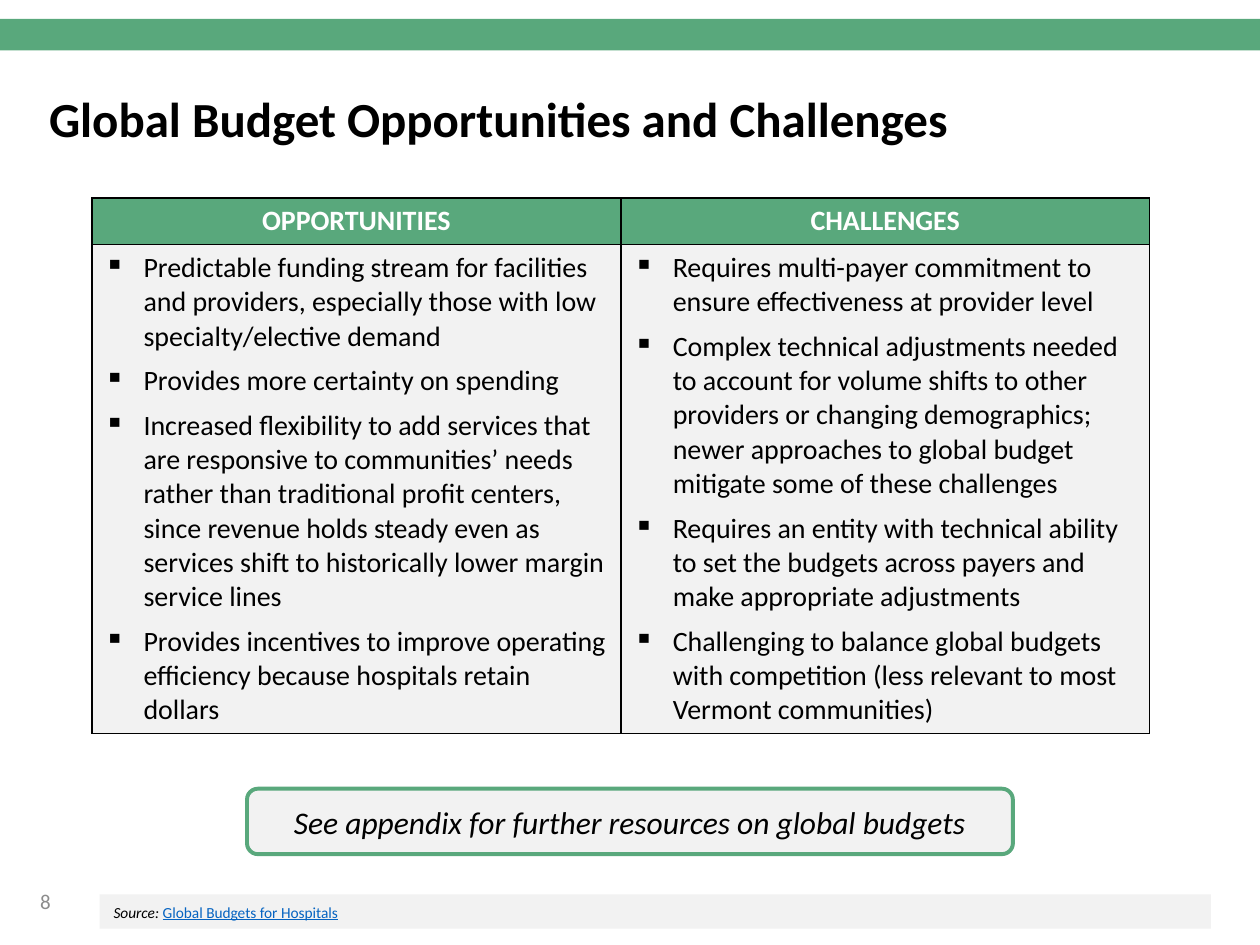
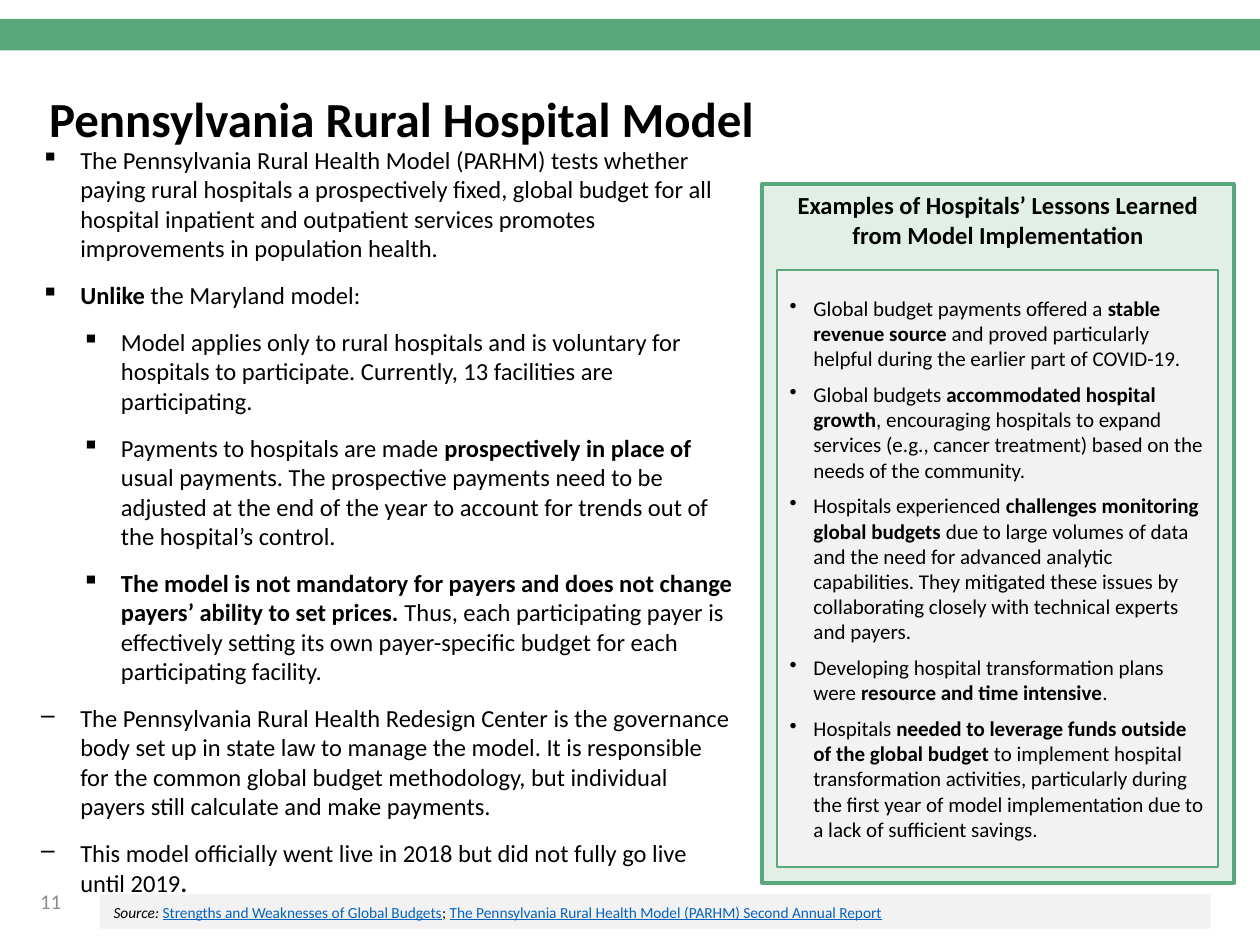
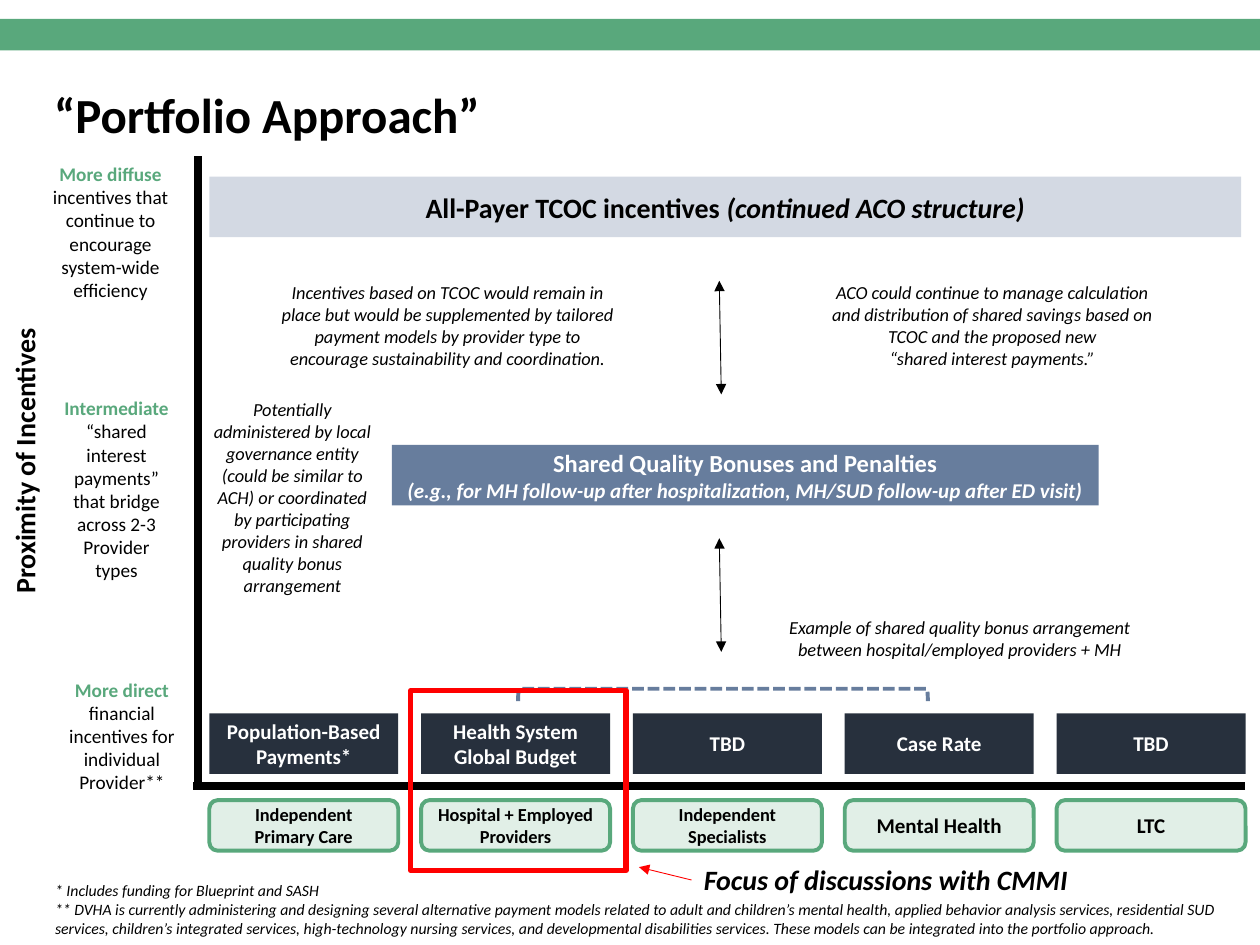
import lxml.etree
import pptx
import pptx.dml.color
import pptx.enum.dml
import pptx.enum.shapes
import pptx.enum.text
import pptx.oxml.ns
import pptx.util

Cm = pptx.util.Cm
Pt = pptx.util.Pt
qn = pptx.oxml.ns.qn
FORM = pptx.enum.shapes.MSO_SHAPE
ALIGN = pptx.enum.text.PP_ALIGN
ANCHOR = pptx.enum.text.MSO_ANCHOR

FONT = "Calibri"
GREEN, MINT, PALE = "59A87C", "E1EFE7", "F2F2F2"
NAVY, STEEL, MIST = "27303D", "677D9D", "D3D9E3"
BLACK, WHITE, GREY, RED, LINK = "000000", "FFFFFF", "8C8C8C", "FF0000", "0563C1"
BOLD = {"bold": True}
LEAD = {"bold": True, "color": GREEN}


def hue(code):
    return pptx.dml.color.RGBColor.from_string(code)


def node(parent, tag, **attrs):
    return lxml.etree.SubElement(parent, qn(tag), attrs)


class Deck:
    """Holds the shared style and the current slide."""

    def __init__(self):
        self.show = pptx.Presentation()
        self.show.slide_width, self.show.slide_height = Cm(25.4), Cm(19.05)
        self.slide = None

    def start(self, title, left=0.74, top=0.61, width=23.44):
        """Add a slide with the green band and its title."""
        self.slide = self.show.slides.add_slide(self.show.slide_layouts[6])
        self.shape((0, 0.38, 25.4, 0.64), GREEN)
        box = self.text((left, top, width, 3.68), [title], 28, bold=True,
                        align=ALIGN.LEFT, anchor=ANCHOR.MIDDLE)
        box.text_frame.paragraphs[0].line_spacing = 0.9

    def foot(self, number, source):
        """Page number and source strip."""
        self.text((0.56, 17.65, 5.72, 1.02), [number], 12, color=GREY,
                  align=ALIGN.LEFT, anchor=ANCHOR.MIDDLE)
        strip = self.shape((2.01, 18.03, 22.4, 0.69), PALE)
        frame = strip.text_frame
        frame.margin_left = frame.margin_right = Cm(0.28)
        frame.margin_top = frame.margin_bottom = Cm(0.15)
        self.words(frame, [source], 8.8, align=ALIGN.LEFT, anchor=ANCHOR.BOTTOM,
                   alt={"color": LINK, "underline": True})
        frame.paragraphs[0].runs[0].font.italic = True

    def style(self, run, size, color=BLACK, bold=False, italic=False, underline=False):
        font = run.font
        font.name, font.size, font.color.rgb = FONT, Pt(size), hue(color)
        font.bold, font.italic, font.underline = bold, italic, underline or None

    def words(self, frame, lines, size, align=ALIGN.CENTER, anchor=ANCHOR.TOP,
              alt=BOLD, **base):
        """Fill a frame; each | switches between the base and alt styles."""
        frame.word_wrap = True
        frame.vertical_anchor = anchor
        for row, line in enumerate(lines):
            para = frame.add_paragraph() if row else frame.paragraphs[0]
            para.alignment = align
            head, *rest = line.split("|")
            para.text = head
            for part in rest:
                para.add_run().text = part
            for turn, run in enumerate(para.runs, 0 if head else 1):
                self.style(run, size, **{**base, **(alt if turn % 2 else {})})

    def bullet(self, para, mark, left, hang, after):
        para.space_after = Pt(after)
        props = para._p.get_or_add_pPr()
        props.set("marL", str(Cm(left)))
        props.set("indent", str(-Cm(hang)))
        node(props, "a:buChar", char=mark)

    def text(self, at, lines, size, **look):
        box = self.slide.shapes.add_textbox(*map(Cm, at))
        self.words(box.text_frame, lines, size, **look)
        return box

    def shape(self, at, fill=None, line=None, weight=2.25, form=FORM.RECTANGLE):
        shape = self.slide.shapes.add_shape(form, *map(Cm, at))
        shape.shadow.inherit = False
        if fill:
            shape.fill.solid()
            shape.fill.fore_color.rgb = hue(fill)
        else:
            shape.fill.background()
        if line:
            shape.line.color.rgb, shape.line.width = hue(line), Pt(weight)
        else:
            shape.line.fill.background()
        return shape

    def label(self, at, lines, size, fill, line=None, form=FORM.RECTANGLE, **look):
        """A filled shape with text in its middle."""
        shape = self.shape(at, fill, line, form=form)
        self.words(shape.text_frame, lines, size, anchor=ANCHOR.MIDDLE, **look)
        return shape

    def line(self, start, end, color=BLACK, weight=0.5, ends=()):
        kind = pptx.enum.shapes.MSO_CONNECTOR.STRAIGHT
        line = self.slide.shapes.add_connector(kind, *map(Cm, start + end))
        line.line.color.rgb, line.line.width = hue(color), Pt(weight)
        props = line._element.spPr
        for tag in ends:
            node(props.find(qn("a:ln")), tag, type="triangle")
        node(props, "a:effectLst")
        return line

    def table(self, at, widths, heights):
        """An empty table with thin black borders."""
        frame = self.slide.shapes.add_table(
            len(heights), len(widths), Cm(at[0]), Cm(at[1]),
            Cm(sum(widths)), Cm(sum(heights)))
        table = frame.table
        for col, width in zip(table.columns, widths):
            col.width = Cm(width)
        for row, height in zip(table.rows, heights):
            row.height = Cm(height)
        for cell in table.iter_cells():
            props = cell._tc.get_or_add_tcPr()
            for side in ("a:lnL", "a:lnR", "a:lnT", "a:lnB"):
                edge = node(props, side, w=str(Pt(1)))
                node(node(edge, "a:solidFill"), "a:srgbClr", val=BLACK)
        return table

    def cell(self, cell, lines, fill, **look):
        cell.fill.solid()
        cell.fill.fore_color.rgb = hue(fill)
        self.words(cell.text_frame, lines, 16, **look)
        cell.vertical_anchor = look.get("anchor", ANCHOR.TOP)


def budget(deck):
    deck.start("Global Budget Opportunities and Challenges")
    # Table with one list per column
    lists = {
        "OPPORTUNITIES": [
            "Predictable funding stream for facilities and providers, especially those with low specialty/elective demand",
            "Provides more certainty on spending",
            "Increased flexibility to add services that are responsive to communities’ needs rather than traditional profit centers, since revenue holds steady even as services shift to historically lower margin service lines",
            "Provides incentives to improve operating efficiency because hospitals retain dollars",
        ],
        "CHALLENGES": [
            "Requires multi-payer commitment to ensure effectiveness at provider level",
            "Complex technical adjustments needed to account for volume shifts to other providers or changing demographics; newer approaches to global budget mitigate some of these challenges",
            "Requires an entity with technical ability to set the budgets across payers and make appropriate adjustments",
            "Challenging to balance global budgets with competition (less relevant to most Vermont communities)",
        ],
    }
    table = deck.table((1.85, 3.99), (10.67, 10.65), (0.94, 9.86))
    for col, (head, points) in enumerate(lists.items()):
        deck.cell(table.cell(0, col), [head], GREEN, color=WHITE, bold=True,
                  anchor=ANCHOR.MIDDLE)
        body = table.cell(1, col)
        deck.cell(body, points, PALE, align=ALIGN.LEFT)
        for para in body.text_frame.paragraphs:
            deck.bullet(para, "▪", 0.79, 0.79, 6)
    # Footer and callout
    deck.foot("8", "Source: |Global Budgets for Hospitals")
    deck.label((4.98, 15.9, 15.44, 1.32),
               ["See appendix for further resources on global budgets"], 18,
               PALE, GREEN, FORM.ROUNDED_RECTANGLE, italic=True)


def rural(deck):
    deck.start("Pennsylvania Rural Hospital Model")
    deck.foot("11", "Source: |Strengths and Weaknesses of Global Budgets|; "
                    "|The Pennsylvania Rural Health Model (PARHM) Second Annual Report")
    # Main list: mark, left indent, text
    outer, inner = 1.75, 2.57
    points = [
        ("▪", outer, "The Pennsylvania Rural Health Model (PARHM) tests whether paying rural hospitals a prospectively fixed, global budget for all hospital inpatient and outpatient services promotes improvements in population health."),
        ("▪", outer, "|Unlike| the Maryland model:"),
        ("▪", inner, "Model applies only to rural hospitals and is voluntary for hospitals to participate. Currently, 13 facilities are participating."),
        ("▪", inner, "Payments to hospitals are made |prospectively in place of |usual payments. The prospective payments need to be adjusted at the end of the year to account for trends out of the hospital’s control."),
        ("▪", inner, "|The model is not mandatory for payers and does not change payers’ ability to set prices. |Thus, each participating payer is effectively setting its own payer-specific budget for each participating facility."),
        ("–", outer, "The Pennsylvania Rural Health Redesign Center is the governance body set up in state law to manage the model. It is responsible for the common global budget methodology, but individual payers still calculate and make payments."),
        ("–", outer, "This model officially went live in 2018 but did not fully go live until 2019|."),
    ]
    box = deck.text((-0.41, 2.92, 15.47, 11.05), [point[2] for point in points], 14,
                    align=ALIGN.LEFT)
    frame = box.text_frame
    frame.margin_left = frame.margin_right = Cm(0.28)
    frame.margin_top = 0
    for para, (mark, left, _) in zip(frame.paragraphs, points):
        deck.bullet(para, mark, left, 0.79, 10)
    # Lessons panel
    panel = deck.shape((15.37, 3.71, 9.5, 14.1), MINT, GREEN)
    deck.words(panel.text_frame,
               ["Examples of Hospitals’ Lessons Learned from Model Implementation"],
               14, bold=True)
    lessons = [
        "Global budget payments offered a |stable revenue source |and proved particularly helpful during the earlier part of COVID-19.",
        "Global budgets |accommodated hospital growth|, encouraging hospitals to expand services (e.g., cancer treatment) based on the needs of the community.",
        "Hospitals experienced |challenges monitoring global budgets |due to large volumes of data and the need for advanced analytic capabilities. They mitigated these issues by collaborating closely with technical experts and payers.",
        "Developing hospital transformation plans were |resource and time intensive|.",
        "Hospitals |needed to leverage funds outside of the global budget |to implement hospital transformation activities, particularly during the first year of model implementation due to a lack of sufficient savings.",
    ]
    card = deck.shape((15.67, 5.44, 8.89, 12.04), PALE, GREEN, 1)
    deck.words(card.text_frame, lessons, 12, align=ALIGN.LEFT, anchor=ANCHOR.MIDDLE)
    for para in card.text_frame.paragraphs:
        deck.bullet(para, "•", 0.48, 0.48, 6)


def mix(deck):
    deck.start("“Portfolio Approach”", 0.84, 0.53, 24.61)
    # Payment models above the axis, provider types below
    pairs = [
        ("Population-Based Payments*", "Independent Primary Care", 10.5),
        ("Health System Global Budget", "Hospital + Employed Providers", 10.5),
        ("TBD", "Independent Specialists", 10.5),
        ("Case Rate", "Mental Health", 12),
        ("TBD", "LTC", 12),
    ]
    for col, (model, group, size) in enumerate(pairs):
        left = 4.22 + 4.27 * col
        deck.label((left, 14.38, 3.81, 1.22), [model], 12, NAVY, color=WHITE, bold=True)
        deck.label((left, 16.13, 3.81, 1.02), [group], size, MINT, GREEN,
                   FORM.ROUNDED_RECTANGLE, bold=True)
    # Axes and their labels
    deck.line((3.99, 3.15), (3.99, 15.88), weight=4.5)
    deck.line((25.1, 15.84), (3.89, 15.84), weight=4.5)
    name = deck.text((-3.3, 7.95, 7.59, 0.94), ["Proximity of Incentives"], 16,
                     bold=True, align=ALIGN.LEFT)
    name.rotation = 270
    tiers = [
        ((0.64, 3.15, 3.18, 3.07), ["|More diffuse |incentives that continue to encourage system-wide efficiency"]),
        ((0.99, 7.87, 2.72, 4.01), ["|Intermediate| “shared interest payments” that bridge across 2-3", "Provider types"]),
        ((0.86, 13.54, 3.2, 2.62), ["|More direct |financial incentives for individual", "Provider**"]),
    ]
    for at, lines in tiers:
        deck.text(at, lines, 11, alt=LEAD)
    # Wide bars
    deck.label((4.22, 3.56, 20.8, 1.22),
               ["All-Payer TCOC incentives |(continued ACO structure)"], 16, MIST,
               bold=True, alt={"italic": True})
    bar = deck.label((7.9, 8.97, 14.25, 1.22), [
        "Shared Quality Bonuses and Penalties",
        "|(e.g., for MH follow-up after hospitalization, MH/SUD follow-up after ED visit)",
    ], 14, STEEL, color=WHITE, bold=True, alt={"italic": True})
    bar.text_frame.paragraphs[1].runs[0].font.size = Pt(12)
    # Double arrows between the levels
    for top in (5.66, 10.85):
        deck.line((14.5, top), (14.54, top + 2.29), ends=("a:headEnd", "a:tailEnd"))
    # Remarks
    notes = [
        ((5.38, 5.54, 7.29, 2.06), ["Incentives based on TCOC would remain in place but would be supplemented by tailored payment models by provider type to encourage sustainability and coordination."]),
        ((16.36, 5.54, 7.29, 2.06), ["ACO could continue to manage calculation and distribution of shared savings based on TCOC and the proposed new", "“shared interest payments.”"]),
        ((15.49, 12.29, 7.72, 1.14), ["Example of shared quality bonus arrangement between hospital/employed providers + MH"]),
        ((3.99, 7.9, 3.81, 4.29), ["Potentially administered by local governance entity (could be similar to ACH) or coordinated by participating providers in shared quality bonus arrangement"]),
    ]
    for at, lines in notes:
        deck.text(at, lines, 10.5, italic=True)
    deck.text((0.86, 17.63, 24.87, 1.42), [
        "* Includes funding for Blueprint and SASH",
        "** DVHA is currently administering and designing several alternative payment models related to adult and children’s mental health, applied behavior analysis services, residential SUD services, children’s integrated services, high-technology nursing services, and developmental disabilities services. These models can be integrated into the portfolio approach.",
    ], 9, italic=True, align=ALIGN.LEFT)
    # Dashed bracket joining two models
    brace = deck.shape((14.45, 9.88, 0.25, 8.26), line=STEEL, form=FORM.RIGHT_BRACKET)
    brace.rotation = 270
    brace.line.dash_style = pptx.enum.dml.MSO_LINE.SQUARE_DOT
    # Red focus frame with its caption
    focus = deck.text((13.94, 17.27, 8.69, 0.94), ["Focus of discussions with CMMI"], 16,
                      bold=True, italic=True, align=ALIGN.LEFT)
    deck.shape((8.28, 13.92, 4.34, 3.63), line=RED, weight=3)
    arrow = deck.line((13.94, 17.74), (12.88, 17.48), RED, ends=("a:tailEnd",))
    arrow.begin_connect(focus, 1)


def main():
    deck = Deck()
    for build in (budget, rural, mix):
        build(deck)
    deck.show.save("out.pptx")


if __name__ == "__main__":
    main()
